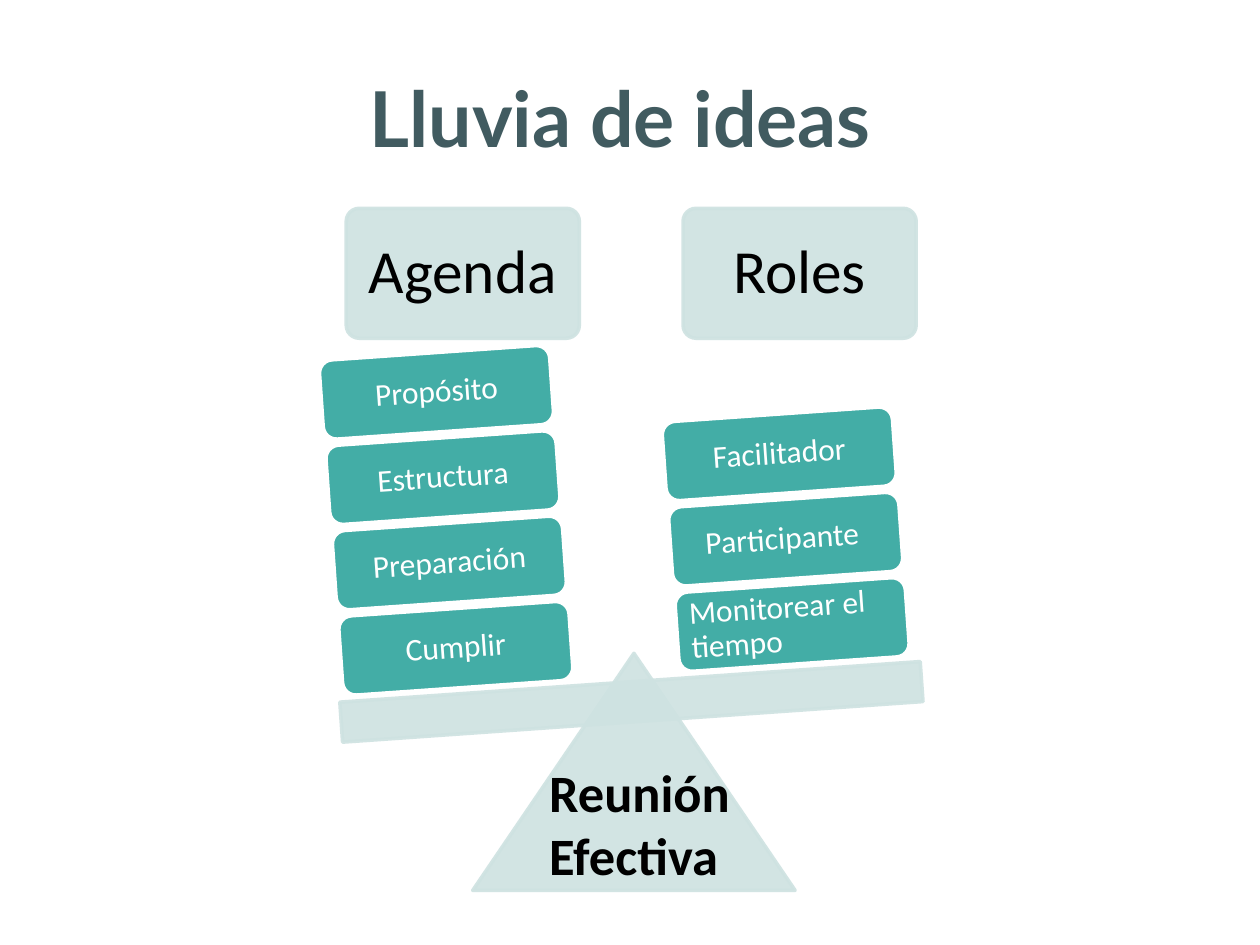
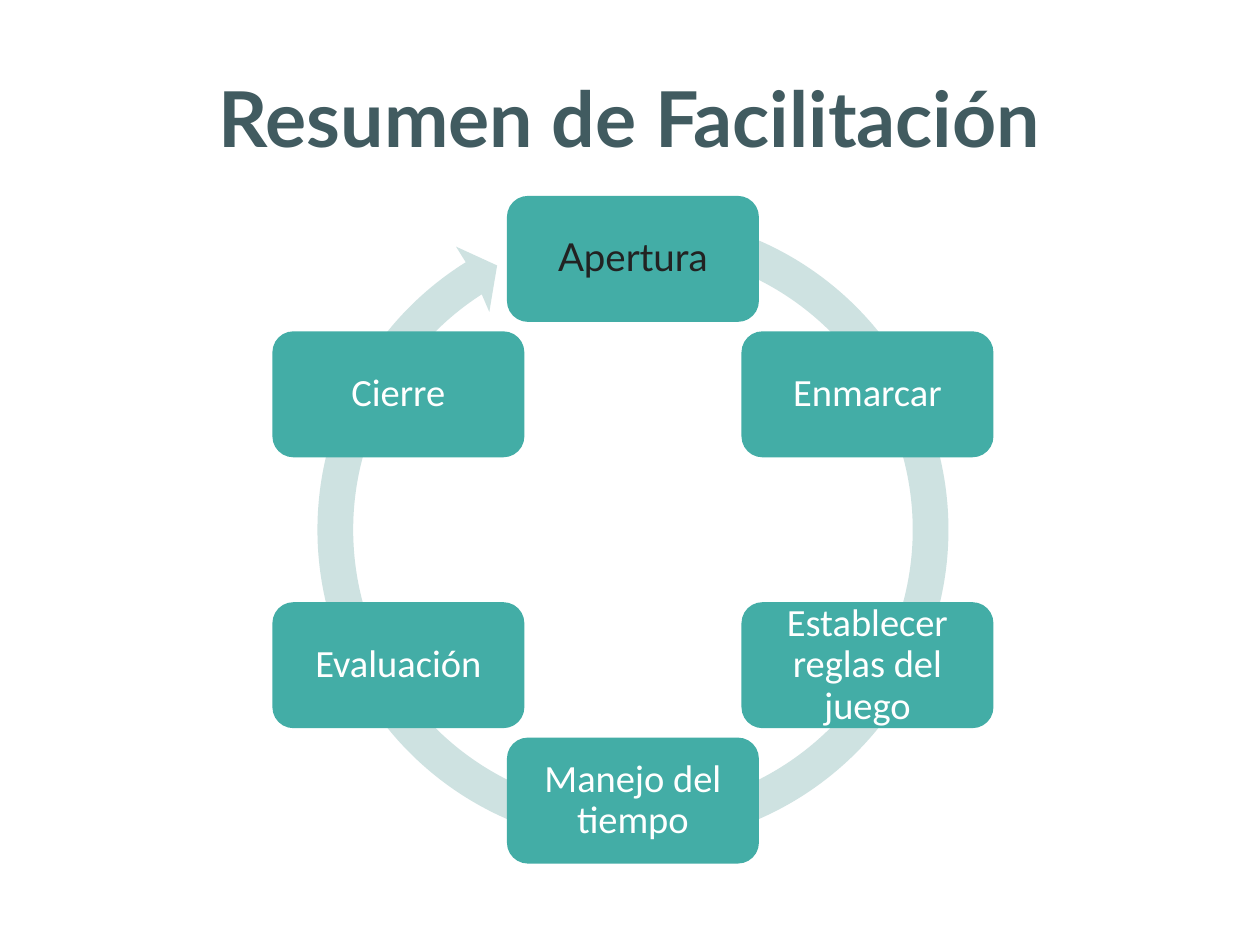
from dataclasses import dataclass
from math import cos, radians, sin, tan

from lxml.etree import SubElement
from pptx import Presentation
from pptx.dml.color import RGBColor
from pptx.enum.shapes import MSO_SHAPE
from pptx.enum.text import MSO_ANCHOR, MSO_AUTO_SIZE, PP_ALIGN
from pptx.oxml.ns import qn
from pptx.oxml.xmlchemy import OxmlElement
from pptx.shapes.autoshape import Shape
from pptx.slide import Slide
from pptx.text.text import TextFrame
from pptx.util import Cm, Pt


@dataclass(frozen=True)
class Theme:
    teal: str = "43ADA6"
    pale: str = "CEE2E1"
    slate: str = "415B60"
    ink: str = "222222"
    black: str = "000000"
    white: str = "FFFFFF"
    sans: str = "Calibri"
    lato: str = "Lato"
    title: int = 44
    head: int = 35
    base: int = 30
    step: int = 22
    brick: int = 18
    edge: int = 2


THEME = Theme()


@dataclass(frozen=True)
class Style:
    """Type settings of one kind of text; the inset is in cm."""
    size: int
    color: str
    font: str = THEME.sans
    bold: bool = False
    align: PP_ALIGN = PP_ALIGN.CENTER
    space: float = 1.0
    inset: tuple[float, float] = (0.25, 0.13)
    anchor: MSO_ANCHOR = MSO_ANCHOR.MIDDLE


@dataclass(frozen=True)
class Box:
    """A shape placed by its centre, in cm."""
    x: float
    y: float
    wide: float
    high: float
    fill: str
    kind: MSO_SHAPE = MSO_SHAPE.ROUNDED_RECTANGLE
    edge: str | None = None
    alpha: int = 100
    turn: float = 0
    curve: float | None = None


@dataclass(frozen=True)
class Stack:
    """A head and its bricks, listed from the bottom up."""
    head: str
    mid: float
    x: float
    y: float
    bricks: tuple[str, ...]


Spot = tuple[float, float]

TITLE = Style(THEME.title, THEME.slate, THEME.lato, True)
HEAD = Style(THEME.head, THEME.black, space=0.9, inset=(0.3, 0.3))
BRICK = Style(THEME.brick, THEME.white, space=0.9, inset=(0.19, 0.25))
LEFT = Style(THEME.brick, THEME.white, align=PP_ALIGN.LEFT, space=0.9,
             inset=(0.19, 0.25))
BASE = Style(THEME.base, THEME.black, bold=True, align=PP_ALIGN.LEFT,
             anchor=MSO_ANCHOR.TOP)
STEP = Style(THEME.step, THEME.white, space=0.9, inset=(0.36, 0.36))
FIRST = Style(THEME.step, THEME.ink, THEME.lato, space=0.9,
              inset=(0.36, 0.36))

# Balance: tilt of the beam, and the shift from one brick to the next
TILT = -4
LEAN, RISE = -0.13, -1.72
STACKS = (
    Stack("Agenda", 9.33, 9.19, 13.07,
          ("Cumplir", "Preparación", "Estructura", "Propósito")),
    Stack("Roles", 16.12, 15.97, 12.59,
          ("Monitorear el tiempo", "Participante ", "Facilitador")),
)

# Cycle: centre and radius of the ring of steps, and curves in each arc
MID_X, MID_Y, RING = 12.76, 10.68, 5.46
PARTS = 5
STEPS = ("Apertura", "Enmarcar", "Establecer reglas del juego",
         "Manejo del tiempo", "Evaluación", "Cierre")


def write(frame: TextFrame, text: str, style: Style) -> None:
    frame.word_wrap = True
    frame.auto_size = MSO_AUTO_SIZE.NONE
    frame.vertical_anchor = style.anchor
    side, top = style.inset
    frame.margin_left = frame.margin_right = Cm(side)
    frame.margin_top = frame.margin_bottom = Cm(top)
    para = frame.paragraphs[0]
    para.alignment = style.align
    para.line_spacing = style.space
    run = para.add_run()
    run.text = text
    font = run.font
    font.name, font.size, font.bold = style.font, Pt(style.size), style.bold
    font.color.rgb = RGBColor.from_string(style.color)


def paint(shape: Shape, fill: str, edge: str | None = None,
          alpha: int = 100) -> None:
    shape.shadow.inherit = False
    shape.fill.solid()
    shape.fill.fore_color.rgb = RGBColor.from_string(fill)
    if edge:
        shape.line.color.rgb = RGBColor.from_string(edge)
        shape.line.width = Pt(THEME.edge)
    else:
        shape.line.fill.background()
    if alpha < 100:
        for tone in shape.element.spPr.iter(qn("a:srgbClr")):
            SubElement(tone, qn("a:alpha")).set("val", str(alpha * 1000))


def draw(slide: Slide, box: Box, text: str = "",
         style: Style = BRICK) -> None:
    shape = slide.shapes.add_shape(
        box.kind, Cm(box.x - box.wide / 2), Cm(box.y - box.high / 2),
        Cm(box.wide), Cm(box.high))
    shape.rotation = box.turn
    if box.curve is not None:
        shape.adjustments[0] = box.curve
    paint(shape, box.fill, box.edge, box.alpha)
    if text:
        write(shape.text_frame, text, style)


def start(deck: Presentation, title: str) -> Slide:
    slide = deck.slides.add_slide(deck.slide_layouts[5])
    head = slide.shapes.title
    head.left, head.top = Cm(1.27), Cm(0.76)
    head.width, head.height = Cm(22.86), Cm(3.18)
    write(head.text_frame, title, TITLE)
    return slide


def polar(angle: float, reach: float) -> Spot:
    """Point at a clockwise angle from the top of the cycle, in cm."""
    turn = radians(angle)
    return MID_X + reach * sin(turn), MID_Y - reach * cos(turn)


def bend(begin: float, end: float, reach: float) -> list[Spot]:
    """Two handles and an end for each curve of an arc."""
    step = (end - begin) / PARTS
    pull = 4 / 3 * tan(radians(step) / 4) * reach
    spots = []
    for i in range(PARTS):
        for angle, sign in ((begin + i * step, 1),
                            (begin + (i + 1) * step, -1)):
            x, y = polar(angle, reach)
            turn = radians(angle)
            spots.append((x + sign * pull * cos(turn),
                          y + sign * pull * sin(turn)))
        spots.append((x, y))
    return spots


def smooth(shape: Shape, first: int) -> None:
    """Join each three lines of an arc, from line first on, in a curve."""
    lines = list(shape.element.spPr.iter(qn("a:lnTo")))
    for i in range(first, first + 3 * PARTS, 3):
        curve = OxmlElement("a:cubicBezTo")
        lines[i].addprevious(curve)
        for line in lines[i:i + 3]:
            curve.append(line[0])
            line.getparent().remove(line)


def scales(deck: Presentation) -> None:
    slide = start(deck, "Lluvia de ideas ")
    pale = {"fill": THEME.pale, "edge": THEME.pale, "alpha": 90}

    # Heads
    for stack in STACKS:
        draw(slide, Box(stack.mid, 5.51, 4.7, 2.62, curve=0.1, **pale),
             stack.head, HEAD)

    # Pivot and beam
    draw(slide, Box(12.78, 15.56, 6.5, 4.78,
                    kind=MSO_SHAPE.ISOSCELES_TRIANGLE, **pale))
    draw(slide, Box(12.73, 14.15, 11.73, 0.81, kind=MSO_SHAPE.RECTANGLE,
                    turn=TILT, **pale))

    # Bricks
    for stack in STACKS:
        for i, text in enumerate(stack.bricks):
            box = Box(stack.x + i * LEAN, stack.y + i * RISE, 4.65, 1.6,
                      THEME.teal, edge=THEME.white, turn=TILT)
            draw(slide, box, text, LEFT if "Monitorear" in text else BRICK)

    # Label on the pivot
    label = slide.shapes.add_textbox(Cm(10.82), Cm(15.2), Cm(4.32), Cm(2.82))
    write(label.text_frame, "Reunión Efectiva", BASE)


def cycle(deck: Presentation) -> None:
    slide = start(deck, "Resumen de Facilitación")

    # Round arrow: outer arc, head, inner arc
    first, last, neck = 15.3, 328, 327.3
    head = [polar(last, 6.73), polar(332.8, 5.99), polar(326.6, 5.26),
            polar(neck, 5.64)]
    ring = [polar(first, 6.36), *bend(first, last, 6.36), *head,
            *bend(neck, first, 5.64)]
    dots = [(Cm(x), Cm(y)) for x, y in ring]
    route = slide.shapes.build_freeform(*dots[0])
    route.add_line_segments(dots[1:], close=True)
    arrow = route.convert_to_shape()
    smooth(arrow, 3 * PARTS + len(head))
    smooth(arrow, 0)
    paint(arrow, THEME.pale)

    # Steps, evenly spread from the top
    for i, text in enumerate(STEPS):
        x, y = polar(i * 360 / len(STEPS), RING)
        draw(slide, Box(x, y, 5.08, 2.54, THEME.teal), text,
             STEP if i else FIRST)


def main() -> None:
    deck = Presentation()
    deck.slide_width, deck.slide_height = Cm(25.4), Cm(19.05)
    scales(deck)
    cycle(deck)
    deck.save("out.pptx")


if __name__ == "__main__":
    main()
